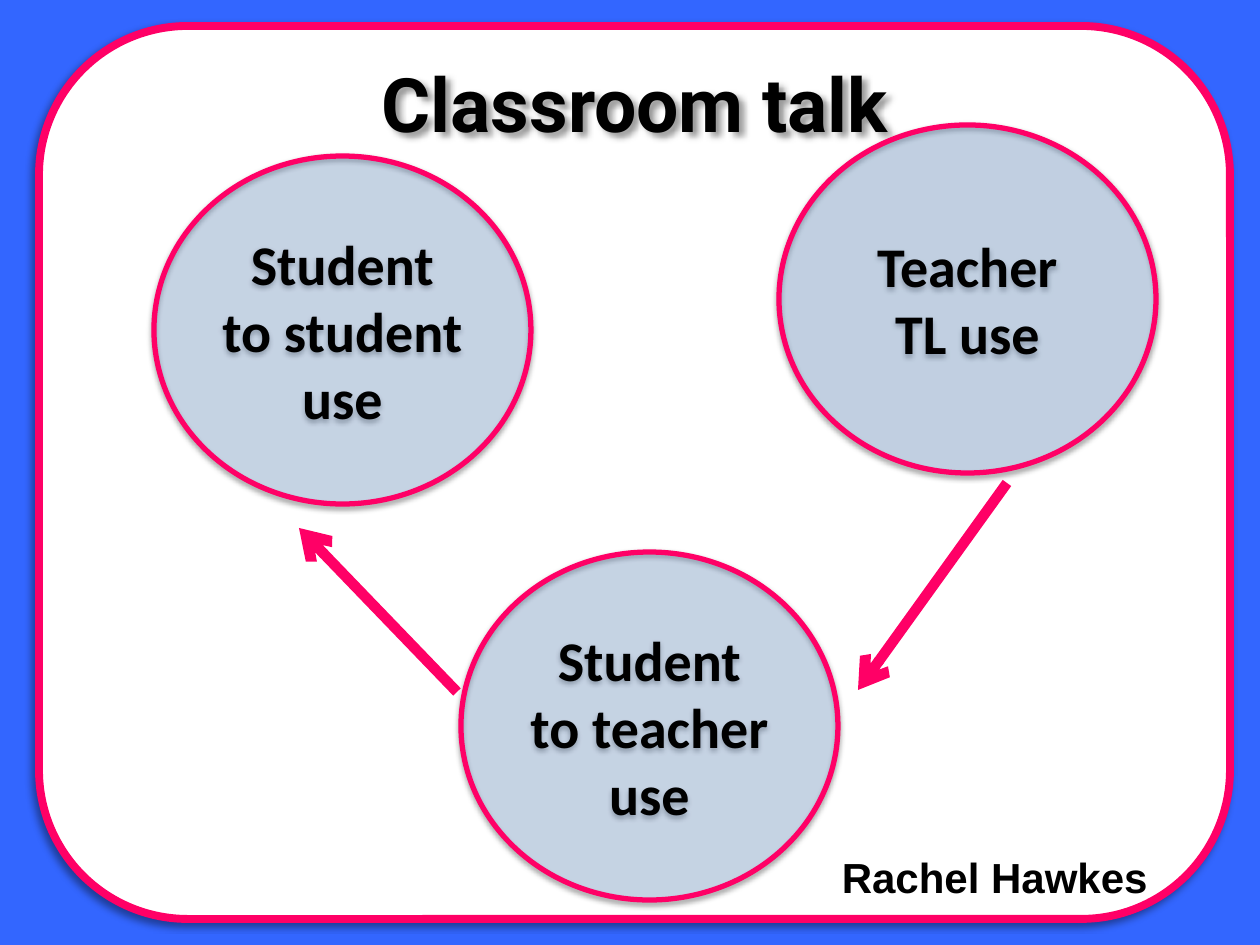
from lxml import etree
from pptx import Presentation
from pptx.dml.color import RGBColor
from pptx.enum.shapes import MSO_CONNECTOR, MSO_SHAPE
from pptx.enum.text import MSO_ANCHOR, PP_ALIGN
from pptx.oxml.ns import qn
from pptx.util import Emu, Pt

COLORS = {"blue": "3366FF", "white": "FFFFFF", "pink": "FF0066",
          "bubble": "558ED5", "black": "000000"}
PX_PER_INCH = 126
BUBBLE_SIZE = (377, 348)


def px(length):
    return Emu(round(length * 914400 / PX_PER_INCH))


def box_emu(box):
    return [px(length) for length in box]


def rgb(name):
    return RGBColor.from_string(COLORS[name])


def add_shadow(shape, opacity, blur, distance, angle):
    """Cast a black shadow; opacity in percent, lengths in points."""
    shape.shadow.inherit = False
    effects = shape._element.spPr.find(qn("a:effectLst"))
    shadow = etree.SubElement(
        effects, qn("a:outerShdw"), blurRad=str(Pt(blur)),
        dist=str(Pt(distance)), dir=str(angle * 60000), rotWithShape="0")
    color = etree.SubElement(shadow, qn("a:srgbClr"), val=COLORS["black"])
    etree.SubElement(color, qn("a:alpha"), val=str(opacity * 1000))


def write(shape, words, size, font, align, anchor):
    frame = shape.text_frame
    frame.word_wrap = True
    frame.vertical_anchor = anchor
    paragraph = frame.paragraphs[0]
    paragraph.alignment = align
    run = paragraph.add_run()
    run.text = words
    run.font.name = font
    run.font.size = Pt(size)
    run.font.bold = True
    run.font.color.rgb = rgb("black")


def add_outlined(slide, kind, box, fill, line_width):
    shape = slide.shapes.add_shape(kind, *box_emu(box))
    shape.fill.solid()
    shape.fill.fore_color.rgb = rgb(fill)
    shape.line.color.rgb = rgb("pink")
    shape.line.width = Pt(line_width)
    return shape


def add_panel(slide, box):
    panel = add_outlined(slide, MSO_SHAPE.ROUNDED_RECTANGLE, box, "white", 4.5)
    add_shadow(panel, 40, 4, 3, 135)


def add_author(slide, box):
    author = slide.shapes.add_textbox(*box_emu(box))
    write(author, "Rachel Hawkes", 24, "Arial", PP_ALIGN.RIGHT, MSO_ANCHOR.TOP)


def add_title(slide, box):
    title = slide.shapes.add_textbox(*box_emu(box))
    write(title, "Classroom talk", 42.9, "Roboto", PP_ALIGN.CENTER, MSO_ANCHOR.MIDDLE)
    add_shadow(title, 40, 3, 3, 45)


def add_bubble(slide, box, words, opacity):
    bubble = add_outlined(slide, MSO_SHAPE.OVAL, box, "bubble", 3)
    color = bubble._element.spPr.find(qn("a:solidFill"))[0]
    etree.SubElement(color, qn("a:alpha"), val=str(opacity * 1000))
    add_shadow(bubble, 38, 3.1, 1.6, 90)
    write(bubble, words, 32, "Calibri", PP_ALIGN.CENTER, MSO_ANCHOR.MIDDLE)


def add_arrow(slide, start, end):
    arrow = slide.shapes.add_connector(MSO_CONNECTOR.STRAIGHT, *box_emu(start + end))
    arrow.line.color.rgb = rgb("pink")
    arrow.line.width = Pt(6)
    etree.SubElement(arrow.line._get_or_add_ln(), qn("a:tailEnd"), type="arrow")
    etree.SubElement(arrow._element.spPr, qn("a:effectLst"))


def build_classroom_talk(slide):
    slide.background.fill.solid()
    slide.background.fill.fore_color.rgb = rgb("blue")
    add_panel(slide, (39, 26, 1191, 893))
    add_author(slide, (0, 845, 1160, 63))
    add_title(slide, (68, 23, 1134, 158))
    for corner, words, opacity in [((779, 125), "Teacher TL use", 25),
                                   ((461, 552), "Student to teacher use", 23),
                                   ((154, 156), "Student to student use", 23)]:
        add_bubble(slide, corner + BUBBLE_SIZE, words, opacity)
    add_arrow(slide, (1007, 483), (858, 690))
    add_arrow(slide, (457, 692), (299, 528))


def main():
    deck = Presentation()
    deck.slide_width, deck.slide_height = px(1260), px(945)
    build_classroom_talk(deck.slides.add_slide(deck.slide_layouts[6]))
    deck.save("out.pptx")


if __name__ == "__main__":
    main()
